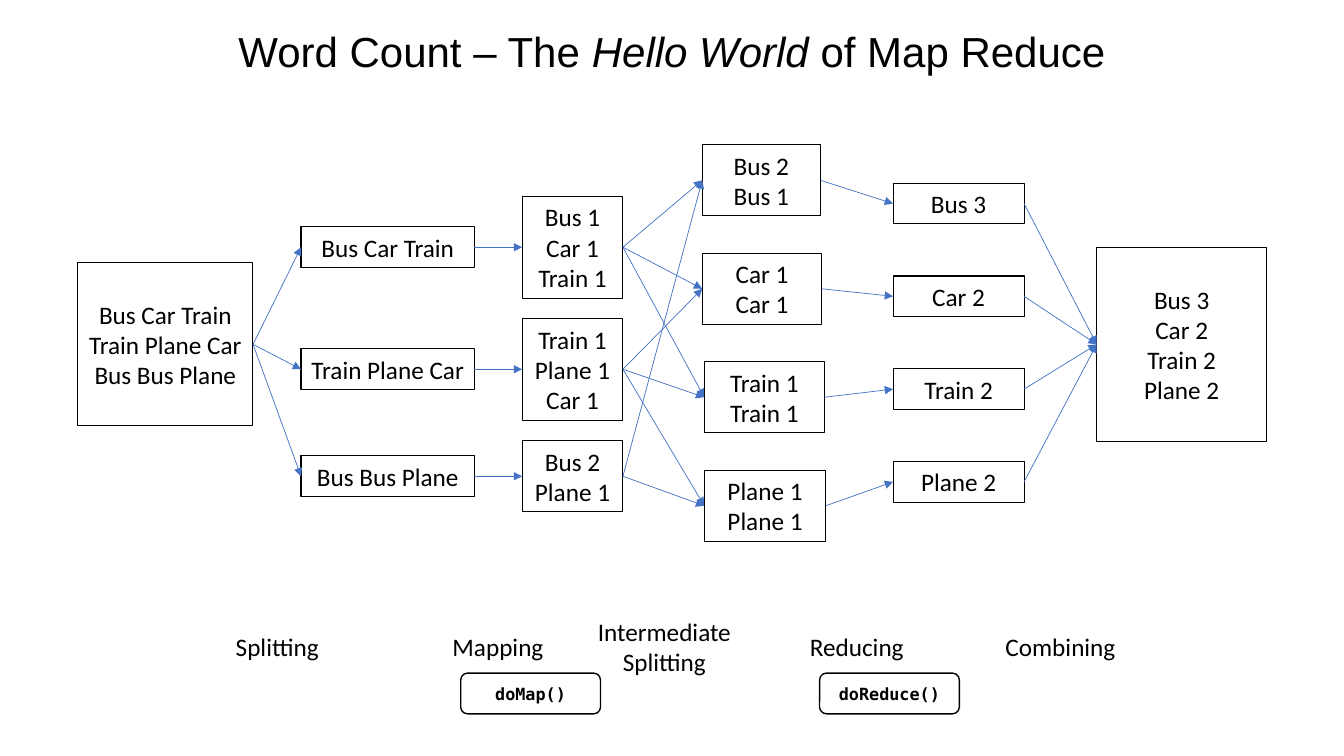
from dataclasses import dataclass

from lxml import etree
from pptx import Presentation
from pptx.dml.color import RGBColor
from pptx.enum.shapes import MSO_CONNECTOR, MSO_SHAPE
from pptx.enum.text import MSO_ANCHOR, MSO_AUTO_SIZE, PP_ALIGN
from pptx.oxml.ns import qn
from pptx.util import Inches, Pt

RECTANGLE = MSO_SHAPE.RECTANGLE
ROUNDED = MSO_SHAPE.ROUNDED_RECTANGLE
STRAIGHT = MSO_CONNECTOR.STRAIGHT
CENTER = PP_ALIGN.CENTER
MIDDLE = MSO_ANCHOR.MIDDLE
NO_AUTOFIT = MSO_AUTO_SIZE.NONE
LEFT_SIDE, RIGHT_SIDE = 1, 3

BLACK, WHITE, BLUE = "000000", "FFFFFF", "4472C4"
TITLE_ONLY_LAYOUT = 5

# The grid has 100 columns and 100 rows
SLIDE_WIDTH, SLIDE_HEIGHT = Inches(13.33), Inches(7.5)
COLUMN, ROW = SLIDE_WIDTH / 100, SLIDE_HEIGHT / 100
LINE_ROWS, PADDING_ROWS = 4.05, 1.33


@dataclass
class Box:
    """A box centred on a grid row; its height follows its number of lines."""
    left: float
    center: float
    width: float
    text: str
    spare_lines: int = 0

    def frame(self) -> tuple[int, int, int, int]:
        line_count = self.text.count("\n") + 1 + self.spare_lines
        height = PADDING_ROWS + LINE_ROWS * line_count
        return grid_frame(self.left, self.center - height / 2, self.width, height)


def grid_frame(left: float, top: float, width: float, height: float) -> tuple[int, int, int, int]:
    return round(left * COLUMN), round(top * ROW), round(width * COLUMN), round(height * ROW)


def color(hex_value: str) -> RGBColor:
    return RGBColor.from_string(hex_value)


def write_text(shape, text: str, *, size: float = 18, font: str = "Calibri",
               bold: bool = False, wrap: bool = False) -> None:
    """Write one paragraph per line; text between asterisks is italic."""
    frame = shape.text_frame
    frame.word_wrap = wrap
    frame.auto_size = NO_AUTOFIT
    frame.vertical_anchor = MIDDLE
    for index, line in enumerate(text.split("\n")):
        paragraph = frame.paragraphs[0] if index == 0 else frame.add_paragraph()
        paragraph.alignment = CENTER
        for part, piece in enumerate(line.split("*")):
            run = paragraph.add_run()
            run.text = piece
            run.font.size = Pt(size)
            run.font.name = font
            run.font.bold = bold
            run.font.italic = part % 2 == 1
            run.font.color.rgb = color(BLACK)


def draw_box(slide, box: Box, *, preset=RECTANGLE, fill: str | None = None,
             line_width: float = 0.75, **text_format):
    shape = slide.shapes.add_shape(preset, *box.frame())
    shape.shadow.inherit = False
    if fill:
        shape.fill.solid()
        shape.fill.fore_color.rgb = color(fill)
    else:
        shape.fill.background()
    shape.line.color.rgb = color(BLACK)
    shape.line.width = Pt(line_width)
    write_text(shape, box.text, **text_format)
    return shape


def draw_label(slide, label: Box) -> None:
    write_text(slide.shapes.add_textbox(*label.frame()), label.text, wrap=True)


def draw_arrow(slide, source, target) -> None:
    arrow = slide.shapes.add_connector(STRAIGHT, 0, 0, 0, 0)
    arrow.begin_connect(source, RIGHT_SIDE)
    arrow.end_connect(target, LEFT_SIDE)
    arrow.line.color.rgb = color(BLUE)
    arrow.line.width = Pt(0.5)
    properties = arrow._element.spPr
    line = properties.find(qn("a:ln"))
    etree.SubElement(line, qn("a:tailEnd"), type="triangle")
    etree.SubElement(properties, qn("a:effectLst"))


# Boxes by stage, from left to right
SPLIT_CENTERS = (32.7, 48.85, 63)
SPLIT_TEXTS = ("Bus Car Train", "Train Plane Car", "Bus Bus Plane")
MAP_TEXTS = ("Bus 1\nCar 1\nTrain 1", "Train 1\nPlane 1\nCar 1", "Bus 2\nPlane 1")
SHUFFLE_TEXTS = ("Bus 2\nBus 1", "Car 1\nCar 1", "Train 1\nTrain 1", "Plane 1\nPlane 1")
SHUFFLE_SPANS = ((52.25, 8.8), (52.25, 8.9), (52.4, 8.95), (52.4, 9.05))
REDUCE_TEXTS = ("Bus 3", "Car 2", "Train 2", "Plane 2")

STAGES = [
    [Box(5.78, 45.55, 13.05, "\n".join(SPLIT_TEXTS), spare_lines=2)],
    [Box(22.4, center, 12.9, text) for center, text in zip(SPLIT_CENTERS, SPLIT_TEXTS)],
    [Box(38.85, center, 7.5, text) for center, text in zip(SPLIT_CENTERS, MAP_TEXTS)],
    [Box(left, 23.85 + 14.35 * index, width, text)
     for index, ((left, width), text) in enumerate(zip(SHUFFLE_SPANS, SHUFFLE_TEXTS))],
    [Box(66.45, 26.93 + 12.27 * index, 9.75, text) for index, text in enumerate(REDUCE_TEXTS)],
    [Box(81.6, 45.55, 12.65, "\n".join(REDUCE_TEXTS), spare_lines=2)],
]

# For each stage but the last: (box, box in the next stage)
LINKS = [
    [(0, 0), (0, 1), (0, 2)],
    [(0, 0), (1, 1), (2, 2)],
    [(0, 0), (2, 0), (0, 1), (1, 1), (0, 2), (1, 2), (2, 3), (1, 3)],
    [(0, 0), (1, 1), (2, 2), (3, 3)],
    [(0, 0), (1, 0), (2, 0), (3, 0)],
]

LABELS = [Box(left, 85.5, 12, text) for left, text in (
    (14.63, "Splitting"), (31.05, "Mapping"), (43.43, "Intermediate\nSplitting"),
    (57.75, "Reducing"), (72.9, "Combining"))]
FUNCTIONS = [Box(34.28, 91.73, 10.4, "doMap()"), Box(60.98, 91.73, 10.4, "doReduce()")]


def main() -> None:
    presentation = Presentation()
    presentation.slide_width, presentation.slide_height = SLIDE_WIDTH, SLIDE_HEIGHT
    slide = presentation.slides.add_slide(presentation.slide_layouts[TITLE_ONLY_LAYOUT])

    # Title
    title = slide.shapes.title
    title.left, title.top, title.width, title.height = grid_frame(0, 0, 100, 13.33)
    write_text(title, "Word Count – The *Hello World *of Map Reduce",
               size=30, font="Arial", wrap=True)

    # Data flow
    stages = [[draw_box(slide, box) for box in stage] for stage in STAGES]
    for sources, targets, links in zip(stages, stages[1:], LINKS):
        for source, target in links:
            draw_arrow(slide, sources[source], targets[target])

    # Step names and functions
    for label in LABELS:
        draw_label(slide, label)
    for function in FUNCTIONS:
        draw_box(slide, function, preset=ROUNDED, fill=WHITE, line_width=1,
                 size=12, font="DejaVu Sans Mono", bold=True)

    presentation.save("out.pptx")


if __name__ == "__main__":
    main()
